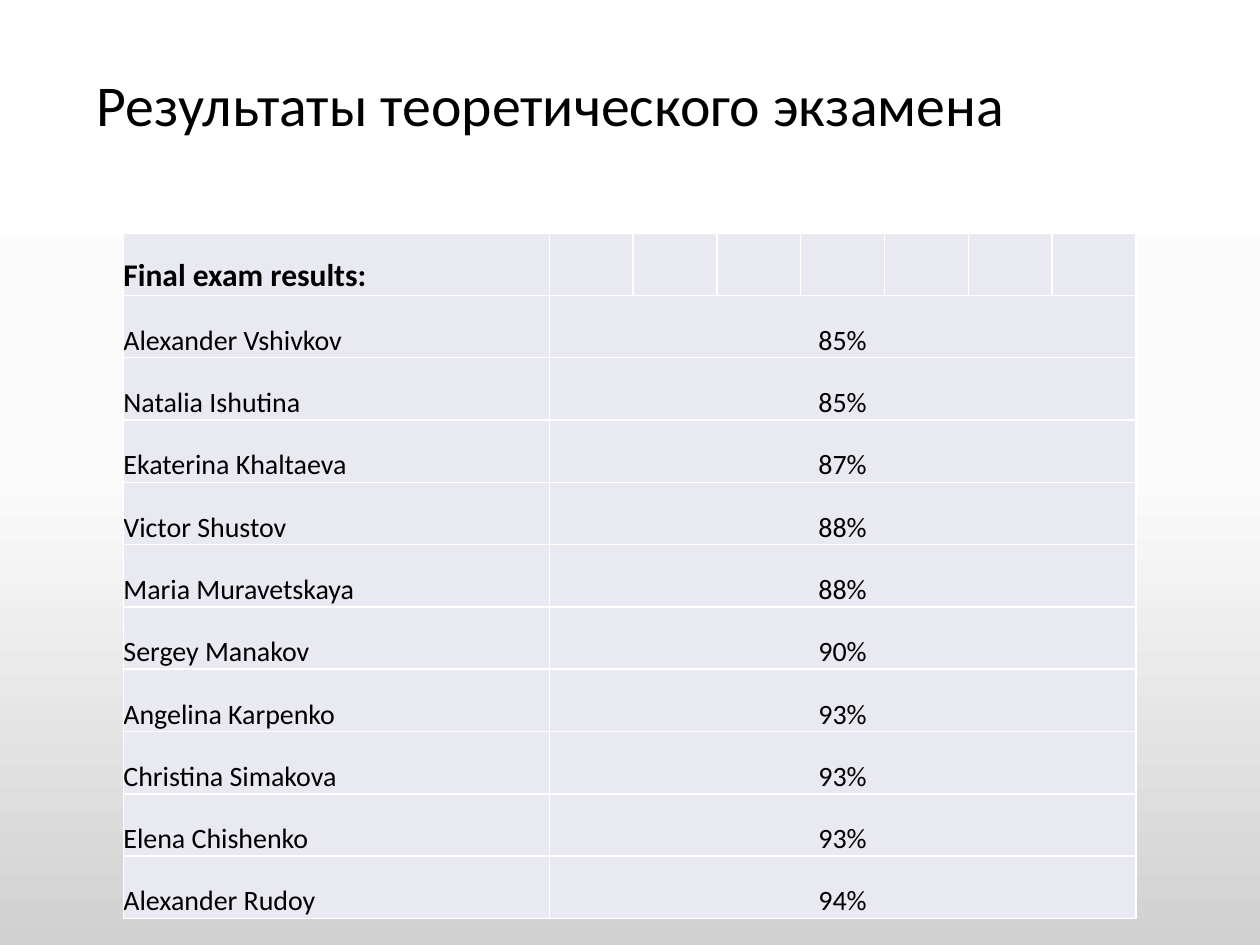
from copy import deepcopy

from lxml.etree import SubElement
from pptx import Presentation
from pptx.dml.color import RGBColor
from pptx.enum.text import MSO_ANCHOR, PP_ALIGN
from pptx.oxml.ns import qn
from pptx.util import Inches, Pt

BLACK = RGBColor(0x00, 0x00, 0x00)
WHITE = RGBColor(0xFF, 0xFF, 0xFF)
PALE = RGBColor(0xE9, 0xEA, 0xF1)
STOPS = [(0, WHITE), (0.5, RGBColor(0xFB, 0xFB, 0xFB)),
         (1, RGBColor(0xD1, 0xD1, 0xD1))]

TITLE = "Результаты теоретического экзамена"
HEAD = "Final exam results:"
SCORES = [
    ("Alexander Vshivkov", "85%"),
    ("Natalia Ishutina", "85%"),
    ("Ekaterina Khaltaeva", "87%"),
    ("Victor Shustov", "88%"),
    ("Maria Muravetskaya", "88%"),
    ("Sergey Manakov", "90%"),
    ("Angelina Karpenko", "93%"),
    ("Christina Simakova", "93%"),
    ("Elena Chishenko", "93%"),
    ("Alexander Rudoy", "94%"),
]
WIDTHS = [3.38] + [0.665] * 7
HEIGHT = 5.44

BASE = {"name": "Calibri", "bold": False}
TITLE_FONT = BASE | {"size": Pt(33)}
HEAD_FONT = BASE | {"size": Pt(18), "bold": True}
BODY_FONT = BASE | {"size": Pt(16)}
FLUSH = {"margin_left": 0, "margin_right": 0, "margin_top": 0,
         "margin_bottom": 0, "vertical_anchor": MSO_ANCHOR.BOTTOM}


def set_all(item, values):
    for name, value in values.items():
        setattr(item, name, value)


def write(frame, text, font, align=PP_ALIGN.LEFT):
    para = frame.paragraphs[0]
    para.alignment = align
    run = para.add_run()
    run.text = text
    set_all(run.font, font)
    run.font.color.rgb = BLACK
    return para


def shade(slide):
    """Fill the background with a vertical three-stop gradient."""
    fill = slide.background.fill
    fill.gradient()
    fill.gradient_angle = 270
    stops = slide.element.find(".//" + qn("a:gsLst"))
    stops.append(deepcopy(stops[0]))
    for stop, (place, color) in zip(fill.gradient_stops, STOPS):
        stop.position = place
        stop.color.rgb = color


def add_title(slide):
    box = slide.shapes.add_textbox(
        Inches(0.67), Inches(0.13), Inches(8.62), Inches(1.45))
    frame = box.text_frame
    set_all(frame, {"word_wrap": True, "vertical_anchor": MSO_ANCHOR.MIDDLE})
    write(frame, TITLE, TITLE_FONT).line_spacing = 0.9


def paint(cell):
    """Give a cell white borders and a pale fill."""
    props = cell._tc.get_or_add_tcPr()
    for side in ("lnL", "lnR", "lnT", "lnB"):
        line = SubElement(props, qn(f"a:{side}"), w=str(Pt(1)))
        solid = SubElement(line, qn("a:solidFill"))
        SubElement(solid, qn("a:srgbClr"), val=str(WHITE))
    cell.fill.solid()
    cell.fill.fore_color.rgb = PALE


def put(cell, text, font, align=PP_ALIGN.LEFT):
    set_all(cell, FLUSH)
    write(cell.text_frame, text, font, align)


def add_scores(slide):
    count = len(SCORES) + 1
    table = slide.shapes.add_table(
        count, len(WIDTHS), Inches(0.98), Inches(1.85),
        Inches(sum(WIDTHS)), Inches(HEIGHT)).table
    for col, width in zip(table.columns, WIDTHS):
        col.width = Inches(width)
    for row in table.rows:
        row.height = Inches(HEIGHT / count)
    for cell in table.iter_cells():
        paint(cell)
    put(table.cell(0, 0), HEAD, HEAD_FONT)
    last = len(WIDTHS) - 1
    for row, (name, score) in enumerate(SCORES, 1):
        put(table.cell(row, 0), name, BODY_FONT)
        table.cell(row, 1).merge(table.cell(row, last))
        put(table.cell(row, 1), score, BODY_FONT, PP_ALIGN.CENTER)


def main():
    deck = Presentation()
    set_all(deck, {"slide_width": Inches(10), "slide_height": Inches(7.5)})
    slide = deck.slides.add_slide(deck.slide_layouts[6])
    shade(slide)
    add_title(slide)
    add_scores(slide)
    deck.save("out.pptx")


if __name__ == "__main__":
    main()
